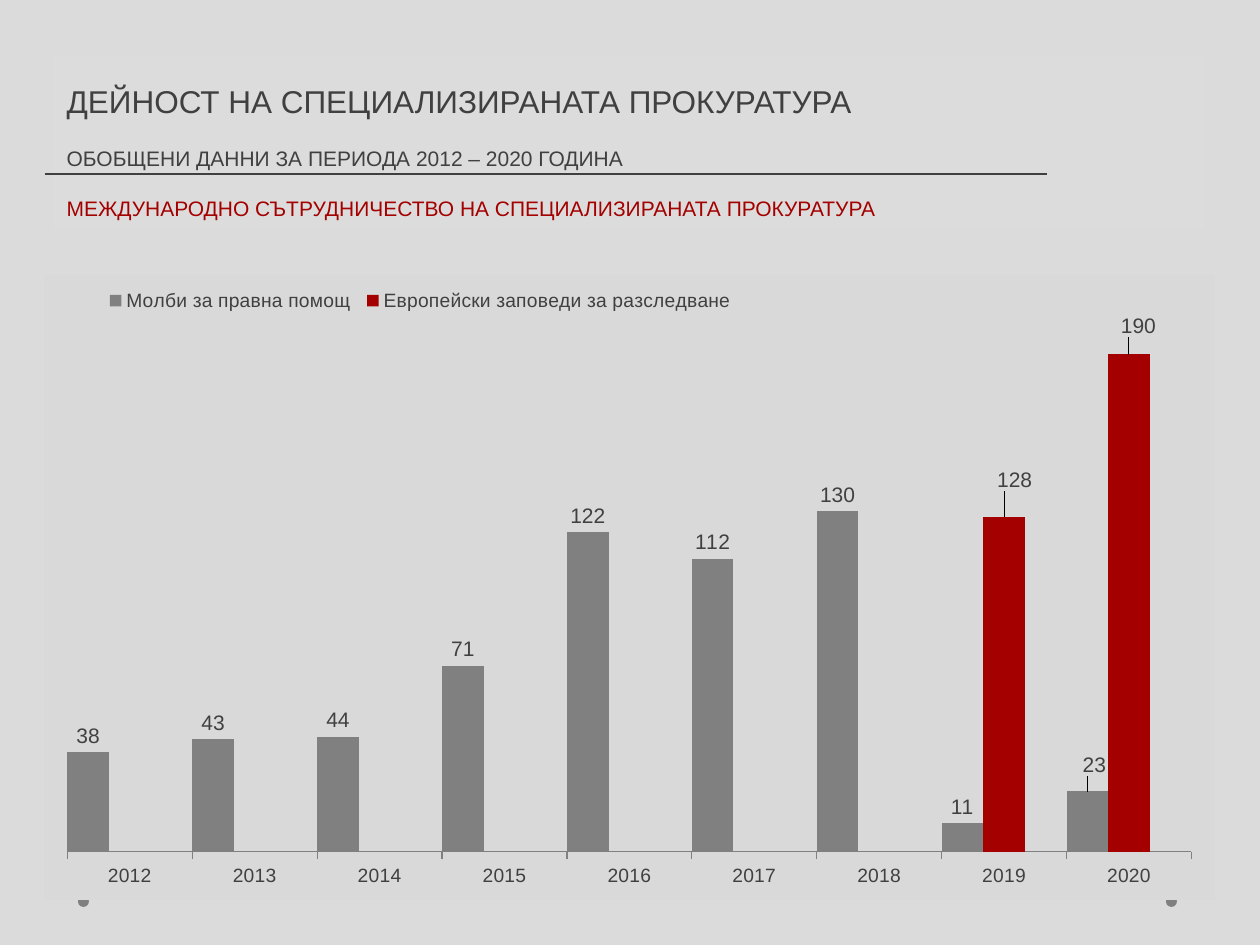
from pptx import Presentation, util as u
from pptx.chart.data import CategoryChartData
from pptx.dml.color import RGBColor
from pptx.enum import chart as c, shapes, text
from pptx.oxml import parse_xml
from pptx.oxml.ns import nsdecls, qn

PX = 914400 // 126
COLORS = {"background": "DBDBDB", "panel": "D9D9D9", "white": "FFFFFF", "text": "404040",
          "gray": "808080", "red": "A40000", "blue": "1B587C"}
HEADING = [
    ("ДЕЙНОСТ НА СПЕЦИАЛИЗИРАНАТА ПРОКУРАТУРА", 18, 1.5, "text"),
    ("ОБОБЩЕНИ ДАННИ ЗА ПЕРИОДА 2012 – 2020 ГОДИНА", 12, 2.0, "text"),
    ("МЕЖДУНАРОДНО СЪТРУДНИЧЕСТВО НА СПЕЦИАЛИЗИРАНАТА ПРОКУРАТУРА", 12, 2.0, "red"),
]
YEARS = [str(year) for year in range(2012, 2021)]
SERIES = [
    ("Молби за правна помощ", [38, 43, 44, 71, 122, 112, 130, 11, 23], "gray"),
    ("Европейски заповеди за разследване", [None] * 7 + [128, 190], "red"),
    ("Series 3", [None] * 9, "blue"),
]
LABEL_SHIFTS = [(0, 8, 7, -10), (1, 7, 10, -20), (1, 8, 9, -12)]
DOTS = [(1166, 896), (78, 896)]
DOT_SIZE = 11
HEADING_BOX = (54, 55, 1150, 174)
RULE = (45, 174, 1047, 174)
CHART_BOX = (44, 275, 1171, 625)
PLOT_BOX = (68, 328, 1124, 524)
LEGEND_BOX = (100, 285, 640, 31)


def px(*values):
    return [value * PX for value in values]


def rgb(name):
    return RGBColor.from_string(COLORS[name])


def paint(fill, name):
    fill.solid()
    fill.fore_color.rgb = rgb(name)


def style(font, size, color="text"):
    for key, value in {"name": "Arial", "size": u.Pt(size), "bold": False}.items():
        setattr(font, key, value)
    font.color.rgb = rgb(color)


def layout_xml(values, inner=False):
    parts = '<c:layoutTarget val="inner"/>' if inner else ""
    if len(values) == 4:
        parts += '<c:xMode val="edge"/><c:yMode val="edge"/>'
    parts += "".join(f'<c:{tag} val="{value:.3f}"/>' for tag, value in zip("xywh", values))
    return parse_xml(f'<c:layout {nsdecls("c")}><c:manualLayout>{parts}</c:manualLayout></c:layout>')


def place_after(parent, tag, layout):
    for old in parent.findall(qn("c:layout")):
        parent.remove(old)
    if tag:
        parent.find(qn(tag)).addnext(layout)
    else:
        parent.insert(0, layout)


def chart_share(box):
    left, top, width, height = CHART_BOX
    return (box[0] - left) / width, (box[1] - top) / height, box[2] / width, box[3] / height


def add_heading(slide):
    title = slide.shapes.title
    for key, value in zip(("left", "top", "width", "height"), px(*HEADING_BOX)):
        setattr(title, key, value)
    paint(title.fill, "white")
    color = title.fill._xPr.find(".//" + qn("a:srgbClr"))
    color.append(parse_xml(f'<a:alpha {nsdecls("a")} val="5000"/>'))
    frame = title.text_frame
    for key, value in {"word_wrap": True, "auto_size": text.MSO_AUTO_SIZE.NONE,
                       "vertical_anchor": text.MSO_ANCHOR.MIDDLE}.items():
        setattr(frame, key, value)
    for index, (line, size, spacing, color) in enumerate(HEADING):
        paragraph = frame.add_paragraph() if index else frame.paragraphs[0]
        paragraph.alignment = text.PP_ALIGN.LEFT
        paragraph.line_spacing = spacing
        run = paragraph.add_run()
        run.text = line
        style(run.font, size, color)


def add_decor(slide):
    for left, top in DOTS:
        dot = slide.shapes.add_shape(shapes.MSO_SHAPE.OVAL, *px(left, top, DOT_SIZE, DOT_SIZE))
        dot.shadow.inherit = False
        paint(dot.fill, "gray")
        dot.line.fill.background()
    rule = slide.shapes.add_connector(shapes.MSO_CONNECTOR.STRAIGHT, *px(*RULE))
    rule.line.color.rgb = rgb("text")
    rule.line.width = u.Pt(0.75)
    rule._element.spPr.append(parse_xml(f'<a:effectLst {nsdecls("a")}/>'))


def add_chart(slide):
    data = CategoryChartData()
    data.categories = YEARS
    for name, values, _ in SERIES:
        data.add_series(name, values)
    chart = slide.shapes.add_chart(c.XL_CHART_TYPE.COLUMN_CLUSTERED, *px(*CHART_BOX), data).chart
    chart.has_title = False
    style(chart.font, 11)
    chart.element.find(qn("c:chart")).addnext(parse_xml(
        f'<c:spPr {nsdecls("c", "a")}><a:solidFill><a:srgbClr val="{COLORS["panel"]}"/>'
        '</a:solidFill><a:ln><a:noFill/></a:ln></c:spPr>'))

    value_axis = chart.value_axis
    for key, value in {"minimum_scale": 0, "maximum_scale": 200, "visible": False,
                       "has_major_gridlines": False}.items():
        setattr(value_axis, key, value)
    category_axis = chart.category_axis
    category_axis.major_tick_mark = c.XL_TICK_MARK.OUTSIDE
    category_axis.format.line.color.rgb = rgb("gray")
    style(category_axis.tick_labels.font, 11)

    plot = chart.plots[0]
    for key, value in {"gap_width": 0, "overlap": 0, "vary_by_categories": False}.items():
        setattr(plot, key, value)
    for series, (_, _, color) in zip(plot.series, SERIES):
        paint(series.format.fill, color)
        series.data_labels.show_value = True
        series.data_labels.position = c.XL_LABEL_POSITION.OUTSIDE_END
        style(series.data_labels.font, 12)
    for series_index, point, dx, dy in LABEL_SHIFTS:
        series = plot.series[series_index]
        label = series.points[point].data_label
        style(label.font, 12)
        label.position = c.XL_LABEL_POSITION.OUTSIDE_END
        element = series._element.xpath(f'.//c:dLbl[c:idx/@val="{point}"]')[0]
        place_after(element, "c:idx", layout_xml((dx / CHART_BOX[2], dy / CHART_BOX[3])))

    chart.has_legend = True
    chart.legend.position = c.XL_LEGEND_POSITION.TOP
    chart.legend.include_in_layout = False
    style(chart.legend.font, 11)
    legend = chart.element.find(".//" + qn("c:legend"))
    place_after(legend, "c:legendPos", layout_xml(chart_share(LEGEND_BOX)))
    legend.find(qn("c:legendPos")).addnext(parse_xml(
        f'<c:legendEntry {nsdecls("c")}><c:idx val="2"/><c:delete val="1"/></c:legendEntry>'))
    plot_area = chart.element.find(".//" + qn("c:plotArea"))
    place_after(plot_area, None, layout_xml(chart_share(PLOT_BOX), inner=True))


def main():
    presentation = Presentation()
    presentation.slide_width, presentation.slide_height = px(1260, 945)
    slide = presentation.slides.add_slide(presentation.slide_layouts[5])
    paint(slide.background.fill, "background")
    add_heading(slide)
    add_decor(slide)
    add_chart(slide)
    presentation.save("out.pptx")


if __name__ == "__main__":
    main()
